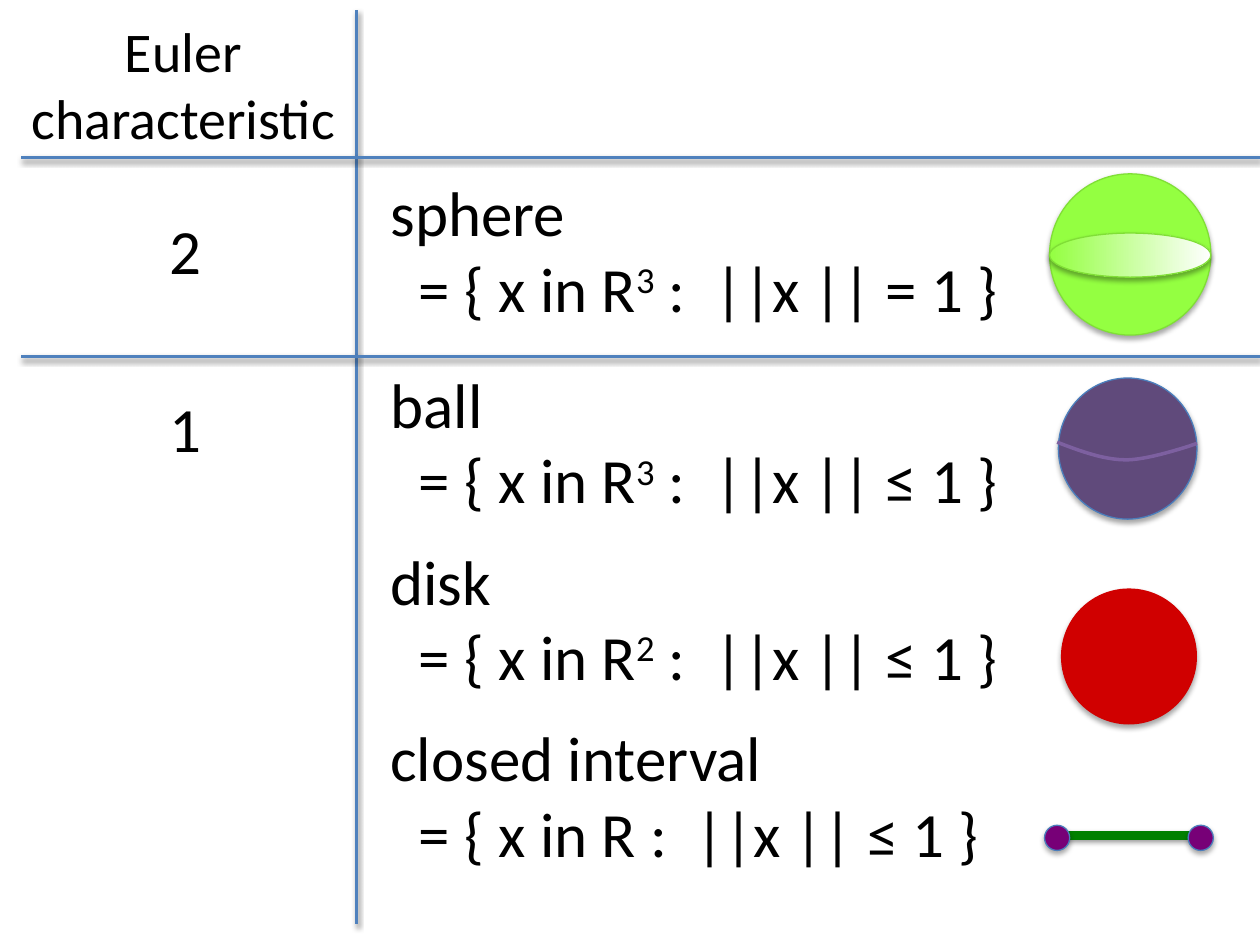
"""Build a slide listing the Euler characteristic of simple spaces."""
import pptx
import pptx.util
import pptx.dml.color
import pptx.enum.dml
import pptx.enum.shapes
import pptx.enum.text
from lxml import etree
from pptx.oxml.ns import qn

Inches = pptx.util.Inches
Pt = pptx.util.Pt
RGBColor = pptx.dml.color.RGBColor

BLACK = RGBColor(0x00, 0x00, 0x00)
WHITE = RGBColor(0xFF, 0xFF, 0xFF)
RULE_BLUE = RGBColor(0x4F, 0x81, 0xBD)
EDGE_BLUE = RGBColor(0x4B, 0x7E, 0xBC)
LIME = RGBColor(0x94, 0xFF, 0x41)
LIME_EDGE = RGBColor(0x80, 0xDF, 0x36)
BALL_PURPLE = RGBColor(0x60, 0x4A, 0x7B)
CURVE_PURPLE = RGBColor(0x7D, 0x60, 0xA0)
DISK_RED = RGBColor(0xD0, 0x00, 0x00)
INTERVAL_GREEN = RGBColor(0x00, 0x80, 0x00)
END_PURPLE = RGBColor(0x77, 0x00, 0x77)

FONT = "Calibri"
INDENT = Pt(16.3)
NO_GAP, SMALL_GAP, LARGE_GAP = 0, 14.6, 58.6

HEADING = [(["Euler characteristic"], NO_GAP, False)]
VALUES = [(["2"], NO_GAP, False), (["1"], LARGE_GAP, False)]
SPHERE = [
    (["sphere"], NO_GAP, False),
    (["= { x in R", "3", " :  ||x || = 1 }"], NO_GAP, True),
]
CONTRACTIBLE = [
    (["ball"], NO_GAP, False),
    (["= { x in R", "3", " :  ||x || ≤ 1 }"], NO_GAP, True),
    (["disk"], SMALL_GAP, False),
    (["= { x in R", "2", " :  ||x || ≤ 1 }"], NO_GAP, True),
    (["closed interval"], SMALL_GAP, False),
    (["= { x in R :  ||x || ≤ 1 }"], NO_GAP, True),
]
TEXTS = [
    ((0.08, 0.08, 2.75, 1.18), HEADING, 32, pptx.enum.text.PP_ALIGN.CENTER),
    ((1.25, 1.63, 0.58, 2.12), VALUES, 36, pptx.enum.text.PP_ALIGN.LEFT),
    ((3, 1.33, 5.25, 1.31), SPHERE, 36, pptx.enum.text.PP_ALIGN.LEFT),
    ((3, 2.85, 5.25, 4.75), CONTRACTIBLE, 36, pptx.enum.text.PP_ALIGN.LEFT),
]
RULES = [
    ((2.83, 0.08), (2.83, 7.33)),
    ((0.17, 1.25), (10, 1.25)),
    ((0.17, 2.83), (10, 2.83)),
]
BALL_CURVES = [
    [(8.39, 3.51), (8.57, 3.58), (8.76, 3.65), (8.94, 3.65)],
    [(8.94, 3.65), (9.13, 3.65), (9.5, 3.52), (9.5, 3.52)],
]
CURVE_STEPS = 16


def add_shadow(shape, opacity, distance):
    properties = shape._element.spPr
    effects = etree.SubElement(properties, qn("a:effectLst"))
    shadow = etree.SubElement(
        effects, qn("a:outerShdw"), blurRad=str(Pt(3.1)),
        dist=str(Pt(distance)), dir="5400000", rotWithShape="0")
    color = etree.SubElement(shadow, qn("a:srgbClr"), val=str(BLACK))
    etree.SubElement(color, qn("a:alpha"), val=str(opacity * 1000))


def add_text(page, place, lines, size, alignment):
    box = page.shapes.add_textbox(*map(Inches, place))
    frame = box.text_frame
    frame.word_wrap = True
    for index, (parts, gap, indented) in enumerate(lines):
        para = frame.paragraphs[0] if index == 0 else frame.add_paragraph()
        para.alignment = alignment
        para.space_before = Pt(gap)
        if indented:
            properties = para._p.get_or_add_pPr()
            properties.set("marL", str(INDENT))
            properties.set("indent", "0")
        for position, part in enumerate(parts):
            span = para.add_run()
            span.text = part
            span.font.name = FONT
            span.font.size = Pt(size)
            span.font.color.rgb = BLACK
            if position == 1:
                span._r.get_or_add_rPr().set("baseline", "30000")


def add_line(shapes, start, end, color, width):
    line = shapes.add_connector(
        pptx.enum.shapes.MSO_CONNECTOR.STRAIGHT,
        *map(Inches, start + end))
    line.line.color.rgb = color
    line.line.width = Pt(width)
    add_shadow(line, 38, 1.6)


def add_ellipse(shapes, place, fill, edge=None, fade=None):
    ellipse = shapes.add_shape(
        pptx.enum.shapes.MSO_SHAPE.OVAL, *map(Inches, place))
    if fade is None:
        ellipse.fill.solid()
        ellipse.fill.fore_color.rgb = fill
    else:
        ellipse.fill.gradient()
        ellipse.fill.gradient_angle = 0
        for stop, color, position in zip(
                ellipse.fill.gradient_stops, (fill, fade), (0, 1)):
            stop.color.rgb = color
            stop.position = position
    if edge is None:
        ellipse.line.fill.background()
    else:
        ellipse.line.color.rgb = edge
        ellipse.line.width = Pt(0.75)
    add_shadow(ellipse, 35, 1.8)


def curve_point(controls, t):
    weights = ((1 - t) ** 3, 3 * t * (1 - t) ** 2, 3 * t * t * (1 - t), t ** 3)
    return tuple(
        Inches(sum(weight * value for weight, value in zip(weights, axis)))
        for axis in zip(*controls))


def add_curve(shapes, curves, color):
    points = [curve_point(controls, step / CURVE_STEPS)
              for controls in curves for step in range(1, CURVE_STEPS + 1)]
    builder = shapes.build_freeform(*map(Inches, curves[0][0]))
    builder.add_line_segments(points, close=False)
    curve = builder.convert_to_shape()
    curve.shadow.inherit = False
    curve.fill.background()
    curve.line.color.rgb = color
    curve.line.width = Pt(2)


def main():
    deck = pptx.Presentation()
    deck.slide_width, deck.slide_height = Inches(10), Inches(7.5)
    page = deck.slides.add_slide(deck.slide_layouts[6])

    for start, end in RULES:
        add_line(page.shapes, start, end, RULE_BLUE, 2)
    for text in TEXTS:
        add_text(page, *text)

    sphere = page.shapes.add_group_shape().shapes
    add_ellipse(sphere, (8.33, 1.38, 1.28, 1.28), LIME, LIME_EDGE)
    add_ellipse(sphere, (8.33, 1.85, 1.28, 0.35), LIME, LIME_EDGE, WHITE)

    interval = page.shapes.add_group_shape().shapes
    add_line(interval, (8.43, 6.63), (9.45, 6.63), INTERVAL_GREEN, 5)
    for left in (8.29, 9.43):
        add_ellipse(interval, (left, 6.55, 0.2, 0.2), END_PURPLE, EDGE_BLUE)

    add_ellipse(page.shapes, (8.42, 4.67, 1.08, 1.08), DISK_RED)

    ball = page.shapes.add_group_shape().shapes
    add_ellipse(ball, (8.4, 3, 1.1, 1.12), BALL_PURPLE, EDGE_BLUE)
    add_curve(ball, BALL_CURVES, CURVE_PURPLE)

    deck.save("out.pptx")


if __name__ == "__main__":
    main()
